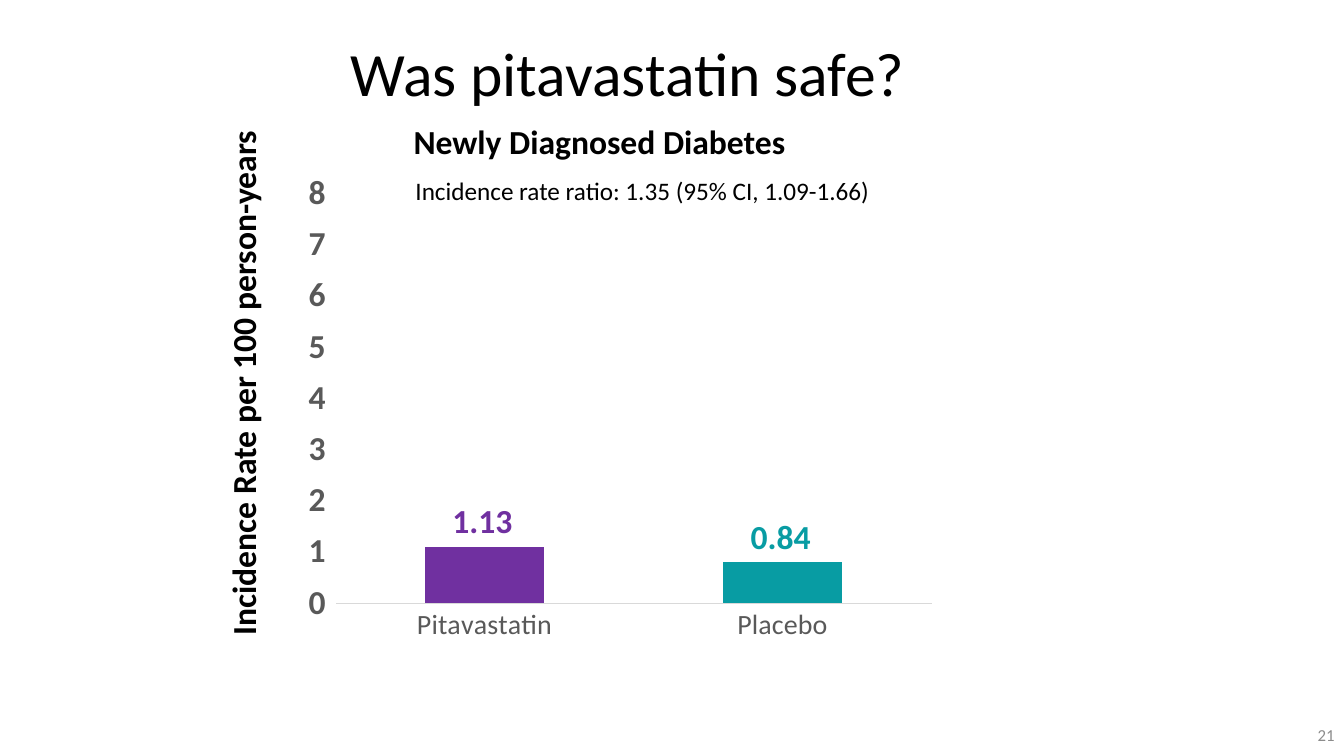
from lxml import etree
from pptx import Presentation
from pptx.chart.data import CategoryChartData
from pptx.dml.color import RGBColor
from pptx.enum.chart import XL_CHART_TYPE, XL_TICK_MARK
from pptx.enum.text import MSO_ANCHOR, PP_ALIGN
from pptx.oxml.ns import qn
from pptx.util import Pt

STACKED = XL_CHART_TYPE.COLUMN_STACKED
NO_TICK, TICK_OUT = XL_TICK_MARK.NONE, XL_TICK_MARK.OUTSIDE
LEFT, RIGHT = PP_ALIGN.LEFT, PP_ALIGN.RIGHT
MIDDLE = MSO_ANCHOR.MIDDLE

FONT = "Calibri"
COLORS = {
    "black": "000000", "axis": "595959", "rule": "D9D9D9", "white": "FFFFFF",
    "number": "8C8C8C", "pitavastatin": "7030A0", "placebo": "089CA3",
}
TITLE = "Was pitavastatin safe?"
ARMS = [("Pitavastatin", 1.1, "1.13", "pitavastatin"), ("Placebo", 0.8, "0.84", "placebo")]
LABELS = [
    ("Newly Diagnosed Diabetes", (288.3, 83, 283, 36), 24, True, 0),
    ("Incidence rate ratio: 1.35 (95% CI, 1.09-1.66)", (289.7, 121.5, 343, 29), 18, False, 0),
    ("Incidence Rate per 100 person-years", (-16, 253.5, 379, 36), 24, True, 270),
]
SLIDE_NUMBER = "21"
CHART_BOX = (193.5, 123.8, 472.3, 396)
PLOT = {"x": 0.098, "y": 0.031, "w": 0.902, "h": 0.743}
AXIS_MAX = 8
VALUE_SIZE = (60.5, 36)


def color(name):
    return RGBColor.from_string(COLORS[name])


def style(font, size, name, bold=False):
    font.name, font.size, font.bold = FONT, Pt(size), bold
    font.color.rgb = color(name)


def rule(line, name):
    line.width = Pt(0.75)
    line.color.rgb = color(name)


def write(frame, text, size, name, bold=False, align=LEFT):
    paragraph = frame.paragraphs[0]
    paragraph.alignment = align
    run = paragraph.add_run()
    run.text = text
    style(run.font, size, name, bold)
    return paragraph


def add_label(text, box, size, name, bold=False, align=LEFT, wrap=False):
    label = slide.shapes.add_textbox(*map(Pt, box))
    label.text_frame.word_wrap = wrap
    write(label.text_frame, text, size, name, bold, align)
    return label


def add_incidence_chart():
    data = CategoryChartData()
    data.categories = [arm for arm, _, _, _ in ARMS]
    data.add_series("Series 1", [rate for _, rate, _, _ in ARMS])
    chart = slide.shapes.add_chart(STACKED, *map(Pt, CHART_BOX), data).chart
    chart.has_title = chart.has_legend = False
    style(chart.font, 10, "black")

    arms, rates = chart.category_axis, chart.value_axis
    arms.major_tick_mark = arms.minor_tick_mark = rates.minor_tick_mark = NO_TICK
    style(arms.tick_labels.font, 20, "axis")
    rule(arms.format.line, "rule")
    rates.minimum_scale, rates.maximum_scale, rates.major_unit = 0, AXIS_MAX, 1
    rates.major_tick_mark = TICK_OUT
    rates.tick_labels.number_format = "General"
    rates.tick_labels.number_format_is_linked = False
    style(rates.tick_labels.font, 24, "axis", True)
    rule(rates.format.line, "white")
    rule(rates.major_gridlines.format.line, "white")

    bars = chart.plots[0]
    bars.gap_width, bars.overlap, bars.vary_by_categories = 150, 100, False
    for index, (_, _, _, arm_color) in enumerate(ARMS):
        fill = bars.series[0].points[index].format.fill
        fill.solid()
        fill.fore_color.rgb = color(arm_color)

    plot_area = chart.element.find(".//" + qn("c:plotArea"))
    for old in plot_area.findall(qn("c:layout")):
        plot_area.remove(old)
    layout = etree.Element(qn("c:layout"))
    manual = etree.SubElement(layout, qn("c:manualLayout"))
    settings = [("layoutTarget", "inner"), ("xMode", "edge"), ("yMode", "edge")]
    for tag, value in settings + list(PLOT.items()):
        etree.SubElement(manual, qn("c:" + tag)).set("val", str(value))
    plot_area.insert(0, layout)


def add_bar_values():
    left, top, width, height = CHART_BOX
    plot_left, plot_width = left + PLOT["x"] * width, PLOT["w"] * width
    plot_top, plot_height = top + PLOT["y"] * height, PLOT["h"] * height
    value_width, value_height = VALUE_SIZE
    for index, (_, rate, value, arm_color) in enumerate(ARMS):
        center = plot_left + plot_width * (index + 0.5) / len(ARMS)
        bar_top = plot_top + plot_height * (1 - rate / AXIS_MAX)
        box = (center - value_width / 2, bar_top - value_height, *VALUE_SIZE)
        add_label(value, box, 24, arm_color, True, wrap=True)


prs = Presentation()
prs.slide_width, prs.slide_height = Pt(960), Pt(540)
slide = prs.slides.add_slide(prs.slide_layouts[5])

title = slide.shapes.title
title.left, title.top, title.width, title.height = map(Pt, (243, 2.6, 700, 104.4))
title.text_frame.vertical_anchor = MIDDLE
write(title.text_frame, TITLE, 44, "black").line_spacing = 0.9

add_incidence_chart()
add_bar_values()
for text, box, size, bold, rotation in LABELS:
    add_label(text, box, size, "black", bold).rotation = rotation
number = add_label(SLIDE_NUMBER, (744.5, 510.5, 216, 28.8), 12, "number", align=RIGHT, wrap=True)
number.text_frame.vertical_anchor = MIDDLE

prs.save("out.pptx")
